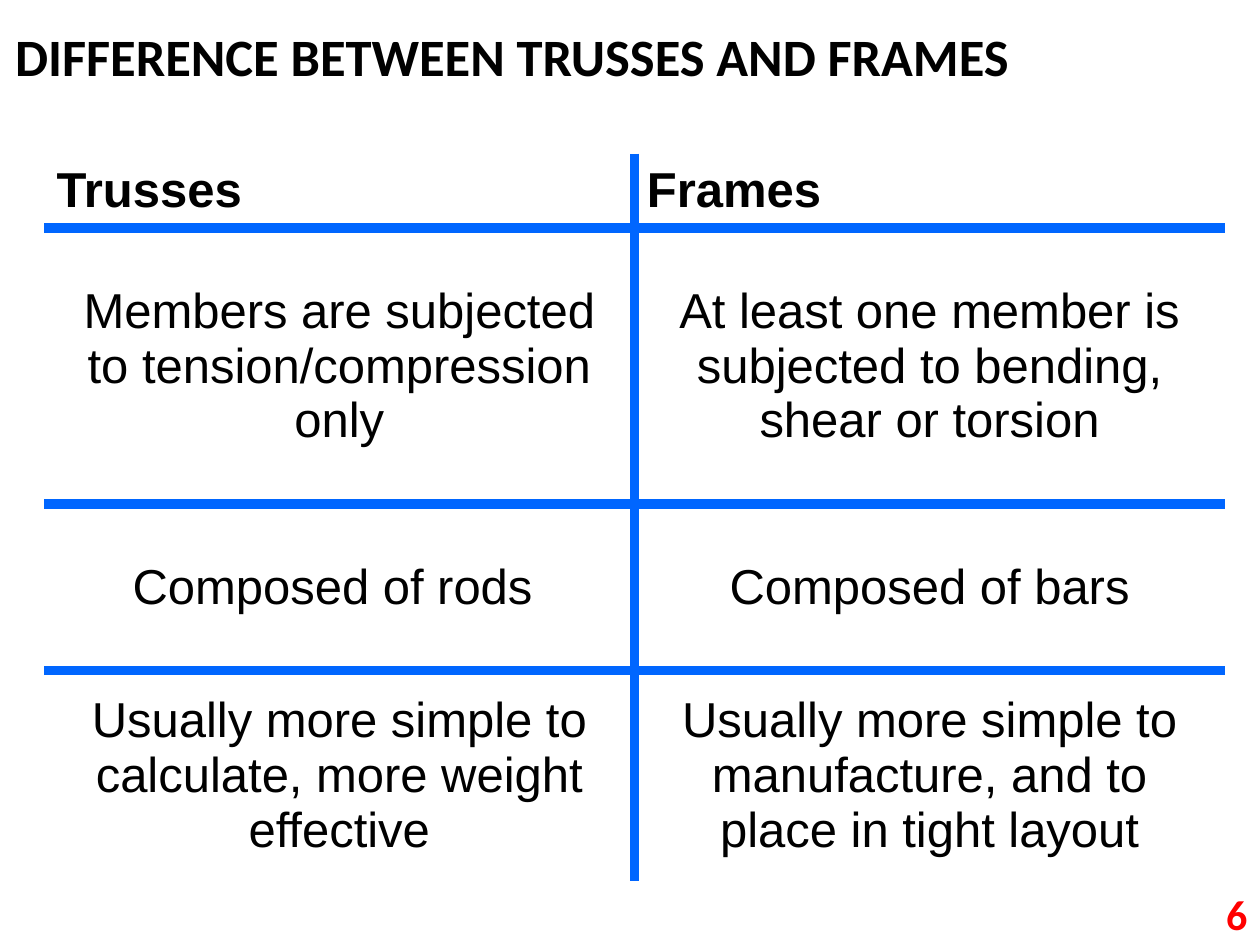
from lxml import etree
from pptx import Presentation
from pptx.dml.color import RGBColor
from pptx.enum import shapes, text
from pptx.oxml import ns
from pptx.util import Inches, Pt

BLUE, WHITE, BLACK, RED = "0066FF", "FFFFFF", "000000", "FF0000"
LEFT, CENTER, RIGHT = text.PP_ALIGN.LEFT, text.PP_ALIGN.CENTER, text.PP_ALIGN.RIGHT
ROWS = [
    ("Trusses", "Frames"),
    ("Members are subjected to tension/compression only",
     "At least one member is subjected to bending, shear or torsion"),
    ("Composed of rods ", "Composed of bars"),
    ("Usually more simple to calculate, more weight effective",
     "Usually more simple to manufacture, and to place in tight layout"),
]


def color(value):
    return RGBColor.from_string(value)


def paint(fill, value, alpha=100):
    fill.solid()
    fill.fore_color.rgb = color(value)
    if alpha < 100:
        clr = fill._xPr.find(ns.qn("a:solidFill"))[0]
        etree.SubElement(clr, ns.qn("a:alpha"), val=str(alpha * 1000))


def set_margins(box, left, top, right, bottom):
    box.margin_left, box.margin_top = Inches(left), Inches(top)
    box.margin_right, box.margin_bottom = Inches(right), Inches(bottom)


def write(tf, words, size, font, value, bold, align):
    tf.word_wrap = True
    p = tf.paragraphs[0]
    p.alignment = align
    r = p.add_run()
    r.text = words
    r.font.size, r.font.name, r.font.bold = Pt(size), font, bold
    r.font.color.rgb = color(value)
    return p


def set_borders(cell, sides):
    """Draw the named sides (L, R, T, B) in blue and hide the others."""
    tcPr = cell._tc.get_or_add_tcPr()
    for i, side in enumerate("LRTB"):
        ln = etree.Element(ns.qn("a:ln" + side), w=str(Pt(6)))
        if side in sides:
            fill = etree.SubElement(ln, ns.qn("a:solidFill"))
            etree.SubElement(fill, ns.qn("a:srgbClr"), val=BLUE)
        else:
            etree.SubElement(ln, ns.qn("a:noFill"))
        tcPr.insert(i, ln)


def add_title(s, x, y, w, h):
    sp = s.shapes.add_shape(shapes.MSO_SHAPE.RECTANGLE,
                            Inches(x), Inches(y), Inches(w), Inches(h))
    sp.shadow.inherit = False
    sp.line.fill.background()
    paint(sp.fill, WHITE, 50)
    tf = sp.text_frame
    tf.vertical_anchor = text.MSO_ANCHOR.MIDDLE
    set_margins(tf, 0.12, 0.01, 0.79, 0.01)
    p = write(tf, "DIFFERENCE BETWEEN TRUSSES AND FRAMES",
              30, "Calibri", BLACK, True, LEFT)
    p.line_spacing = 0.8


def add_comparison(s, x, y, w, heights):
    table = s.shapes.add_table(len(ROWS), 2, Inches(x), Inches(y), Inches(w),
                               Inches(sum(heights))).table
    table.first_row = table.horz_banding = False
    for i, (words, height) in enumerate(zip(ROWS, heights)):
        table.rows[i].height = Inches(height)
        header = i == 0
        for j, label in enumerate(words):
            cell = table.cell(i, j)
            cell.vertical_anchor = text.MSO_ANCHOR.MIDDLE
            set_margins(cell, 0.1, 0.05, 0.1, 0.05)
            paint(cell.fill, WHITE, 50 if header else 100)
            # Only the inner grid lines show
            sides = "RL"[j]
            sides += "" if header else "T"
            sides += "B" if i < len(ROWS) - 1 else ""
            set_borders(cell, sides)
            p = write(cell.text_frame, label, 28, "Arial", BLACK, header,
                      LEFT if header else CENTER)
            p.space_before = Pt(5.6)


def add_page_number(s, x, y, w, h):
    tf = s.shapes.add_textbox(Inches(x), Inches(y), Inches(w), Inches(h)).text_frame
    set_margins(tf, 0.1, 0.05, 0.04, 0.04)
    write(tf, "6", 24, "Calibri", RED, True, RIGHT)


def main():
    prs = Presentation()
    prs.slide_width, prs.slide_height = Inches(10), Inches(7.5)
    s = prs.slides.add_slide(prs.slide_layouts[6])
    add_title(s, 0, 0.21, 10, 0.55)
    add_comparison(s, 0.35, 1.22, 9.37, [0.59, 2.19, 1.32, 1.67])
    add_page_number(s, 9.33, 7, 0.61, 0.49)
    prs.save("out.pptx")


if __name__ == "__main__":
    main()
